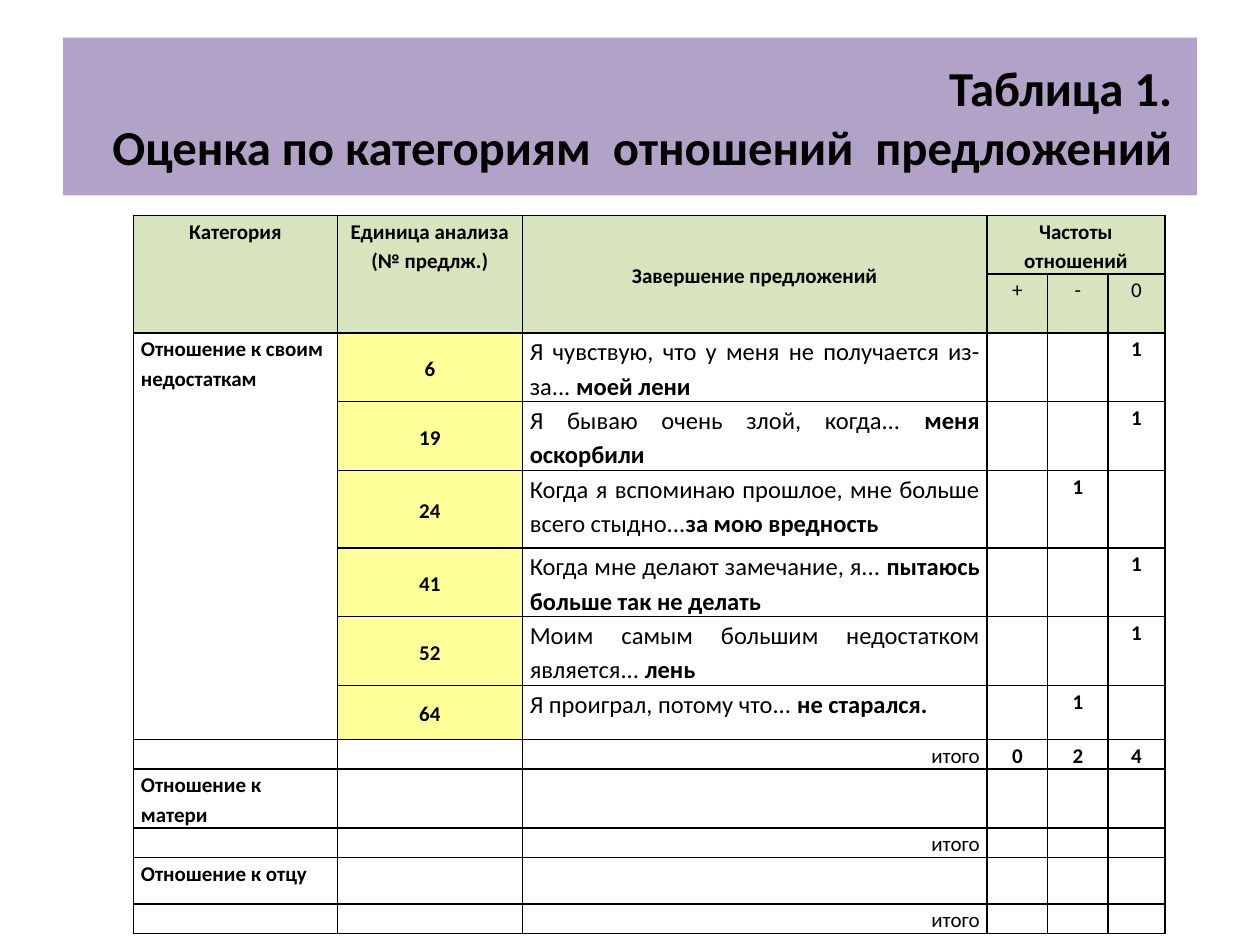
from dataclasses import dataclass

from lxml.etree import SubElement
from pptx import Presentation
from pptx.dml.color import RGBColor
from pptx.enum.shapes import MSO_SHAPE
from pptx.enum.text import MSO_ANCHOR, PP_ALIGN
from pptx.oxml.ns import qn
from pptx.util import Cm, Pt


@dataclass(frozen=True)
class Theme:
    font: str = "Calibri"
    ink: RGBColor = RGBColor(0x00, 0x00, 0x00)
    banner: RGBColor = RGBColor(0xB3, 0xA2, 0xC7)
    header: RGBColor = RGBColor(0xD7, 0xE4, 0xBD)
    unit: RGBColor = RGBColor(0xFF, 0xFF, 0x99)
    title_size: float = 27.9
    sentence_size: int = 14
    label_size: int = 12
    border: int = 1
    line_spacing: float = 1.15


THEME = Theme()
TITLE = ["Таблица 1.", "Оценка по категориям  отношений  предложений"]
COLUMNS = [4.11, 3.73, 9.37, 1.22, 1.22, 1.14]
ROWS = [1.12, 1.17, 1.32, 1.32, 1.57, 1.32, 1.32, 1.09, 0.56, 1.12, 0.56, 0.94, 0.56]
HEADINGS = [
    (["Категория"], MSO_ANCHOR.TOP),
    (["Единица анализа", "(№ предлж.)"], MSO_ANCHOR.TOP),
    (["Завершение предложений"], MSO_ANCHOR.MIDDLE),
]
SIGNS = ["+", "-", "0"]
SENTENCES = [
    ("6", "Я чувствую, что у меня не получается из-за... ", "моей лени", "0"),
    ("19", "Я бываю очень злой, когда... ", "меня оскорбили", "0"),
    ("24", "Когда я вспоминаю прошлое, мне больше всего стыдно...", "за мою вредность", "-"),
    ("41", "Когда мне делают замечание, я... ", "пытаюсь больше так не делать", "0"),
    ("52", "Моим самым большим недостатком является... ", "лень", "0"),
    ("64", "Я проиграл, потому что... ", "не старался.", "-"),
]
FIRST_SENTENCE = 2
FIRST_SIGN = 3
CATEGORIES = {2: "Отношение к своим недостаткам", 9: "Отношение к матери", 11: "Отношение к отцу"}
TOTAL_ROWS = [8, 10, 12]


def apply_format(target, values):
    for name, value in values.items():
        setattr(target, name, value)


def add_text(paragraph, text, size, bold=True):
    run = paragraph.add_run()
    run.text = text
    apply_format(run.font, {"name": THEME.font, "size": Pt(size), "bold": bold})
    run.font.color.rgb = THEME.ink


def add_banner(slide, left, top, width, height):
    banner = slide.shapes.add_shape(MSO_SHAPE.RECTANGLE, left, top, width, height)
    banner.shadow.inherit = False
    banner.fill.solid()
    banner.fill.fore_color.rgb = THEME.banner
    banner.line.fill.background()
    frame = banner.text_frame
    apply_format(frame, {"word_wrap": True, "vertical_anchor": MSO_ANCHOR.MIDDLE,
                         "margin_left": Cm(0.25), "margin_right": Cm(0.5)})
    for index, line in enumerate(TITLE):
        paragraph = frame.add_paragraph() if index else frame.paragraphs[0]
        paragraph.alignment = PP_ALIGN.RIGHT
        add_text(paragraph, line, THEME.title_size)


def prepare_cell(cell):
    apply_format(cell, {"margin_left": Cm(0.15), "margin_right": Cm(0.15),
                        "margin_top": 0, "margin_bottom": 0})
    properties = cell._tc.get_or_add_tcPr()
    for side in ("a:lnL", "a:lnR", "a:lnT", "a:lnB"):
        border = SubElement(properties, qn(side), w=str(Pt(THEME.border)))
        color = SubElement(SubElement(border, qn("a:solidFill")), qn("a:srgbClr"))
        color.set("val", str(THEME.ink))
    cell.fill.background()
    paragraph = cell.text_frame.paragraphs[0]
    SubElement(paragraph._p, qn("a:endParaRPr"), sz=str(THEME.label_size * 100))


def paint(cell, color):
    cell.fill.solid()
    cell.fill.fore_color.rgb = color


def write_cell(cell, lines, align=PP_ALIGN.CENTER, bold=True, anchor=MSO_ANCHOR.TOP):
    cell.vertical_anchor = anchor
    for index, line in enumerate(lines):
        frame = cell.text_frame
        paragraph = frame.add_paragraph() if index else frame.paragraphs[0]
        apply_format(paragraph, {"alignment": align, "line_spacing": THEME.line_spacing})
        add_text(paragraph, line, THEME.label_size, bold)


def fill_header(table):
    for row in range(FIRST_SENTENCE):
        for column in range(len(COLUMNS)):
            paint(table.cell(row, column), THEME.header)
    for column, (lines, anchor) in enumerate(HEADINGS):
        table.cell(0, column).merge(table.cell(1, column))
        write_cell(table.cell(0, column), lines, anchor=anchor)
    table.cell(0, FIRST_SIGN).merge(table.cell(0, len(COLUMNS) - 1))
    write_cell(table.cell(0, FIRST_SIGN), ["Частоты отношений"])
    for column, sign in enumerate(SIGNS, FIRST_SIGN):
        write_cell(table.cell(1, column), [sign], bold=False)


def fill_sentences(table):
    last = FIRST_SENTENCE + len(SENTENCES) - 1
    table.cell(FIRST_SENTENCE, 0).merge(table.cell(last, 0))
    for row, (number, opening, ending, sign) in enumerate(SENTENCES, FIRST_SENTENCE):
        paint(table.cell(row, 1), THEME.unit)
        write_cell(table.cell(row, 1), [number], anchor=MSO_ANCHOR.MIDDLE)
        sentence = table.cell(row, 2).text_frame.paragraphs[0]
        apply_format(sentence, {"alignment": PP_ALIGN.JUSTIFY,
                                "line_spacing": THEME.line_spacing})
        add_text(sentence, opening, THEME.sentence_size, False)
        add_text(sentence, ending, THEME.sentence_size)
        write_cell(table.cell(row, FIRST_SIGN + SIGNS.index(sign)), ["1"])


def fill_totals(table):
    for row, category in CATEGORIES.items():
        write_cell(table.cell(row, 0), [category], PP_ALIGN.LEFT)
    for row in TOTAL_ROWS:
        write_cell(table.cell(row, 2), ["итого"], PP_ALIGN.RIGHT, bold=False)
    marks = [sentence[-1] for sentence in SENTENCES]
    for column, sign in enumerate(SIGNS, FIRST_SIGN):
        write_cell(table.cell(TOTAL_ROWS[0], column), [str(marks.count(sign))])


def add_ratings(slide, left, top, width, height):
    table = slide.shapes.add_table(len(ROWS), len(COLUMNS), left, top, width, height).table
    apply_format(table, {"first_row": False, "horz_banding": False})
    for column, share in zip(table.columns, COLUMNS):
        column.width = int(width * share / sum(COLUMNS))
    for row, share in zip(table.rows, ROWS):
        row.height = int(height * share / sum(ROWS))
    for cell in table.iter_cells():
        prepare_cell(cell)
    fill_header(table)
    fill_sentences(table)
    fill_totals(table)


def main():
    deck = Presentation()
    apply_format(deck, {"slide_width": Cm(25.4), "slide_height": Cm(19.05)})
    slide = deck.slides.add_slide(deck.slide_layouts[6])
    add_banner(slide, Cm(1.27), Cm(0.76), Cm(22.86), Cm(3.18))
    add_ratings(slide, Cm(2.69), Cm(4.34), Cm(sum(COLUMNS)), Cm(sum(ROWS)))
    deck.save("out.pptx")


if __name__ == "__main__":
    main()
